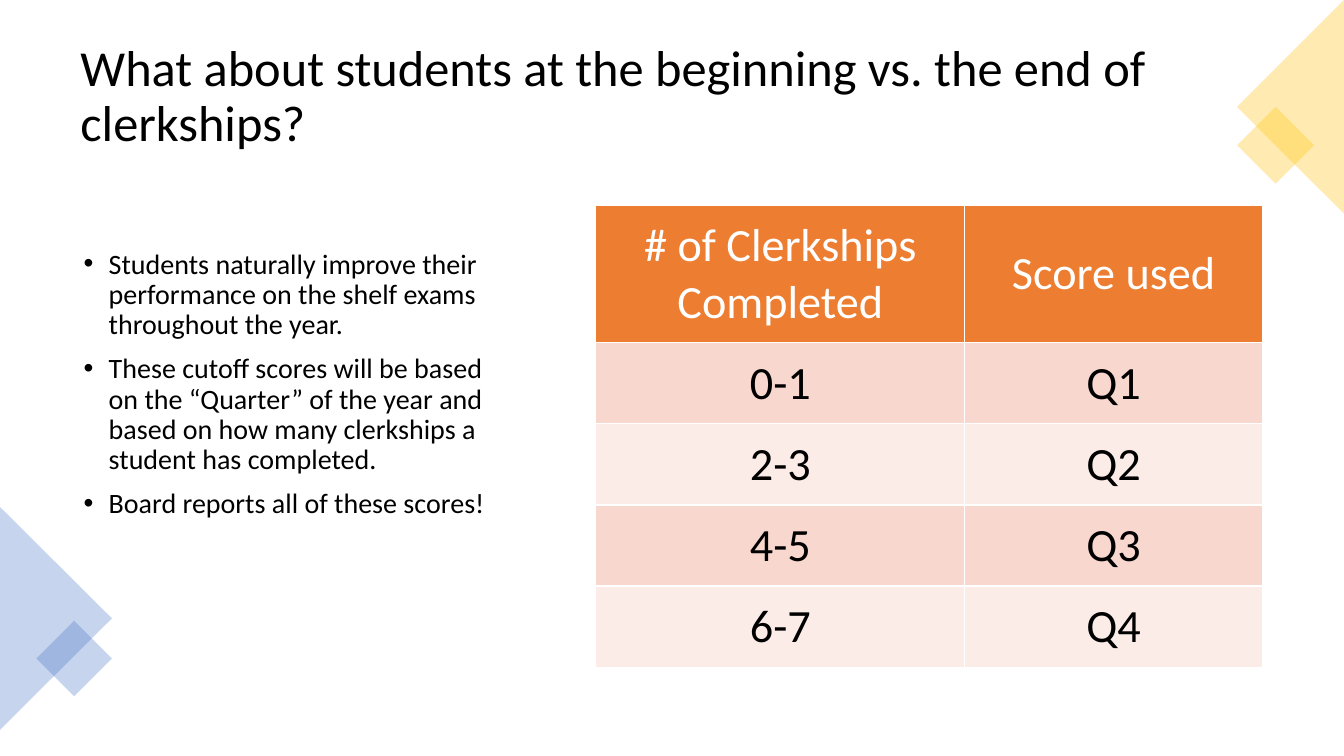
from dataclasses import dataclass
from math import sqrt

from lxml.etree import SubElement
from pptx import Presentation
from pptx.dml.color import RGBColor
from pptx.enum.shapes import MSO_SHAPE
from pptx.enum.text import MSO_ANCHOR, PP_ALIGN
from pptx.oxml import parse_xml
from pptx.oxml.ns import nsdecls, qn
from pptx.util import Inches, Pt


@dataclass(frozen=True)
class Theme:
    """Hold the colours and type sizes of the slide."""
    font: str = "Calibri"
    ink: str = "000000"
    white: str = "FFFFFF"
    blue: str = "4472C4"
    gold: str = "FFC000"
    head: str = "ED7D31"
    bands: tuple = ("F8D7CE", "FCECE8")
    title: int = 36
    body: int = 20
    table: int = 33
    alpha: int = 30


THEME = Theme()
WIDE, HIGH = 13.33, 7.5
TITLE = "What about students at the beginning vs. the end of clerkships?"
POINTS = (
    "Students naturally improve their performance on the shelf exams throughout the year.",
    "These cutoff scores will be based on the “Quarter” of the year and "
    "based on how many clerkships a student has completed.",
    "Board reports all of these scores!",
)
ROWS = (
    ("# of Clerkships Completed", "Score used"),
    ("0-1", "Q1"),
    ("2-3", "Q2"),
    ("4-5", "Q3"),
    ("6-7", "Q4"),
)


def apply(thing, values):
    """Set each named attribute of an object."""
    for name, value in values.items():
        setattr(thing, name, value)


def write(para, text, size, color=THEME.ink, **values):
    """Write one styled run and format its paragraph."""
    run = para.add_run()
    run.text = text
    apply(run.font, {"name": THEME.font, "size": Pt(size), "bold": False})
    run.font.color.rgb = RGBColor.from_string(color)
    apply(para, values)


def frame(slide, box, anchor):
    """Add a wrapping text box and return its text frame."""
    text = slide.shapes.add_textbox(*map(Inches, box)).text_frame
    apply(text, {"word_wrap": True, "vertical_anchor": anchor})
    return text


def title(slide, box):
    """Place the slide title."""
    text = frame(slide, box, MSO_ANCHOR.MIDDLE)
    write(text.paragraphs[0], TITLE, THEME.title, line_spacing=0.9)


def points(slide, box):
    """Place the bulleted points."""
    text = frame(slide, box, MSO_ANCHOR.TOP)
    for i, point in enumerate(POINTS):
        para = text.add_paragraph() if i else text.paragraphs[0]
        write(para, point, THEME.body, line_spacing=0.9, space_before=Pt(10))
        props = para._p.get_or_add_pPr()
        props.set("marL", str(Inches(0.25)))
        props.set("indent", str(-Inches(0.25)))
        SubElement(props, qn("a:buFont"), typeface="Arial")
        SubElement(props, qn("a:buChar"), char="•")


def piece(group, kind, center, size, spin, color):
    """Add a turned translucent shape around a centre point."""
    (x, y), (w, h) = center, size
    shape = group.shapes.add_shape(kind, *map(Inches, (x - w / 2, y - h / 2, w, h)))
    shape.rotation = spin
    shape.shadow.inherit = False
    shape.line.fill.background()
    shape.fill.solid()
    shape.fill.fore_color.rgb = RGBColor.from_string(color)
    tint = shape._element.spPr.find(qn("a:solidFill"))[0]
    SubElement(tint, qn("a:alpha"), val=str(THEME.alpha * 1000))


def corner(slide, box, side, color, left):
    """Place an edge triangle and a diamond that reaches as far inward."""
    x, y, w, h = box
    reach = side / sqrt(2)
    mid = x + w - reach if left else x + reach
    group = slide.shapes.add_group_shape()
    piece(group, MSO_SHAPE.ISOSCELES_TRIANGLE, (x + w / 2, y + h / 2), (h, w),
          90 if left else 270, color)
    piece(group, MSO_SHAPE.RECTANGLE, (mid, y + 0.68 * h), (side, side), 45, color)


def border(cell):
    """Draw thin white borders around a cell."""
    props = cell._tc.get_or_add_tcPr()
    for i, edge in enumerate("LRTB"):
        props.insert(i, parse_xml(
            f'<a:ln{edge} {nsdecls("a")} w="{Pt(1)}"><a:solidFill>'
            f'<a:srgbClr val="{THEME.white}"/></a:solidFill></a:ln{edge}>'))


def scores(slide, box):
    """Place the score table, with a tall header over equal rows."""
    table = slide.shapes.add_table(len(ROWS), 2, *map(Inches, box)).table
    wide, tall = 3.66, 1.36
    for col, width in zip(table.columns, (wide, box[2] - wide)):
        col.width = Inches(width)
    for r, texts in enumerate(ROWS):
        table.rows[r].height = Inches((box[3] - tall) / (len(ROWS) - 1) if r else tall)
        for c, text in enumerate(texts):
            cell = table.cell(r, c)
            cell.fill.solid()
            cell.fill.fore_color.rgb = RGBColor.from_string(
                THEME.bands[(r - 1) % 2] if r else THEME.head)
            apply(cell, {"vertical_anchor": MSO_ANCHOR.MIDDLE,
                         "margin_left": Inches(0.18), "margin_right": Inches(0.18),
                         "margin_top": Inches(0.09), "margin_bottom": Inches(0.09)})
            write(cell.text_frame.paragraphs[0], text, THEME.table,
                  THEME.ink if r else THEME.white, alignment=PP_ALIGN.CENTER)
            border(cell)


def main():
    """Build and save the slide."""
    deck = Presentation()
    apply(deck, {"slide_width": Inches(WIDE), "slide_height": Inches(HIGH)})
    slide = deck.slides.add_slide(deck.slide_layouts[6])
    title(slide, (0.7, 0.35, 11.93, 1.24))
    points(slide, (0.73, 2.43, 4.38, 4.81))
    corner(slide, (0, 5.03, 1.11, 2.21), 0.53, THEME.blue, True)
    corner(slide, (WIDE - 1.06, 0, 1.06, 2.12), 0.54, THEME.gold, False)
    scores(slide, (5.91, 2.04, 6.61, 4.58))
    deck.save("out.pptx")


if __name__ == "__main__":
    main()
